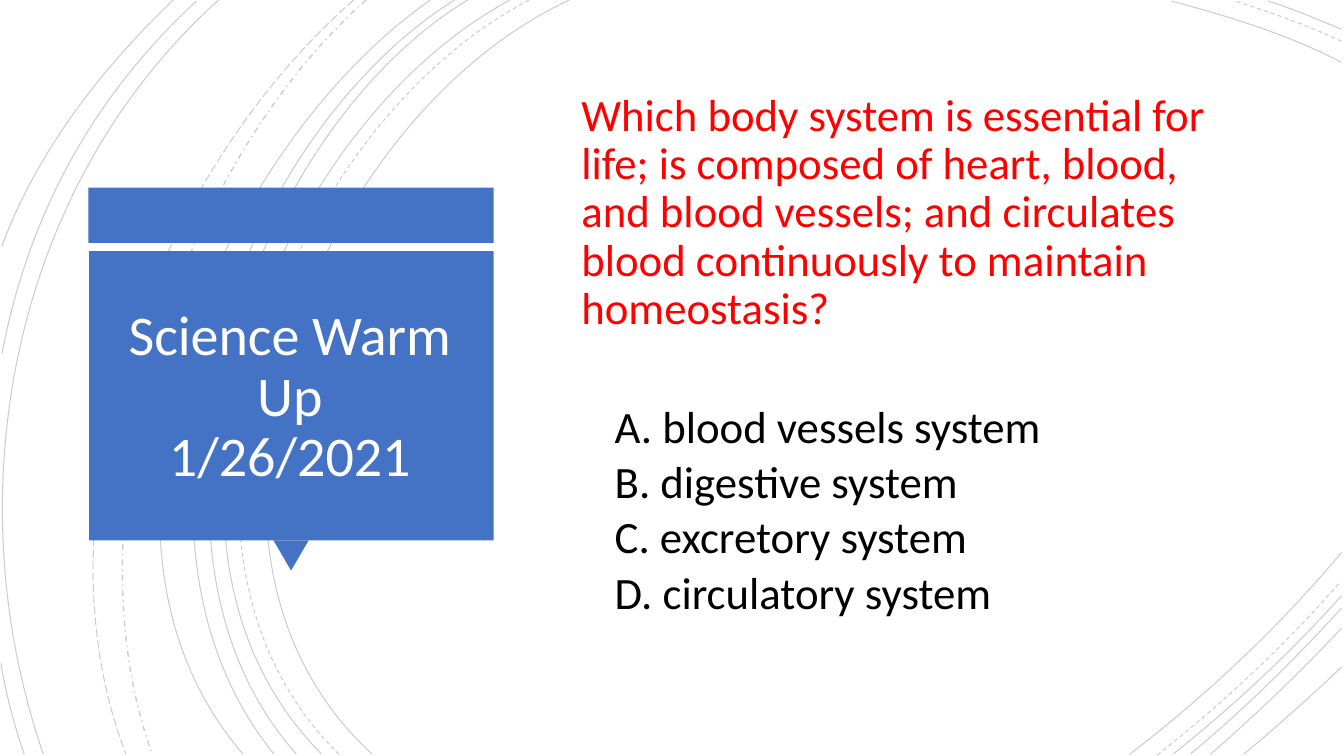
from lxml.etree import SubElement
from pptx import Presentation
from pptx.dml.color import RGBColor
from pptx.enum.dml import MSO_LINE
from pptx.enum.shapes import MSO_SHAPE as SHAPE
from pptx.enum.text import MSO_ANCHOR as ANCHOR, MSO_AUTO_SIZE, PP_ALIGN as ALIGN
from pptx.oxml.ns import qn
from pptx.util import Pt


def rgb(color):
    return RGBColor.from_string(color)


def style_text(p, size, color, **formats):
    p.line_spacing = 0.9
    for name, value in formats.items():
        setattr(p, name, value)
    for r in p.runs:
        r.font.name, r.font.size = "Calibri", Pt(size)
        r.font.color.rgb = rgb(color)


prs = Presentation()
prs.slide_width, prs.slide_height = Pt(960), Pt(540)
s = prs.slides.add_slide(prs.slide_layouts[5])

# Background arcs: start, two control points and end of each curve
SOLID, DASH = MSO_LINE.SOLID, MSO_LINE.DASH
ARCS = [
    (SOLID, (406.8, 0), (226.8, 82.8), (103, 388.8), (265.7, 538.6)),
    (SOLID, (958.3, 44.6), (920.2, 24.5), (877, 11.5), (836.6, 0.7)),
    (SOLID, (807.1, 538.6), (861.8, 496.8), (913.7, 447.8), (958.3, 394.6)),
    (DASH, (378, 0), (205.2, 90), (88.6, 386.6), (241.9, 538.6)),
    (DASH, (958.3, 29.5), (933.8, 18), (907.2, 8.6), (882, 0.7)),
    (DASH, (826.6, 539.3), (873.4, 502.6), (918, 460.8), (957.6, 415.4)),
    (SOLID, (364.3, 0), (194.4, 91.4), (79.2, 386.6), (229.7, 538.6)),
    (SOLID, (958.3, 20.9), (941, 13.7), (923.8, 6.5), (905.8, 0.7)),
    (SOLID, (838.1, 538.6), (880.6, 504.7), (921.6, 466.6), (958.3, 425.5)),
    (SOLID, (334.1, 0), (175.7, 95.8), (79.2, 389.5), (211.7, 538.6)),
    (SOLID, (850.3, 538.6), (888.5, 506.9), (924.5, 471.6), (958.3, 434.2)),
    (SOLID, (324.7, 0), (166.3, 99.4), (69.8, 383.8), (195.8, 538.6)),
    (SOLID, (864.7, 538.6), (897.1, 510.5), (928.8, 480.2), (958.3, 448.6)),
    (SOLID, (307.4, 0), (156.2, 105.8), (38.2, 380.9), (173.5, 538.6)),
    (SOLID, (888.5, 538.6), (912.2, 519.1), (935.3, 498.2), (958.3, 476.6)),
    (MSO_LINE.DASH_DOT, (261.4, 0), (126.7, 119.5), (46.8, 366.5), (108.7, 538.6)),
    (MSO_LINE.LONG_DASH, (252.7, 0), (113, 121.7), (20.9, 359.3), (90, 538.6)),
    (SOLID, (156.2, 0), (7.9, 133.2), (-33.1, 352.8), (31, 538.6)),
    (SOLID, (140.4, 0.7), (66.2, 69.1), (20.2, 154.1), (1.4, 252.7)),
    (SOLID, (0.7, 473.8), (4.3, 496.1), (10.1, 517.7), (17.3, 538.6)),
    (SOLID, (123.8, 0), (72, 49.7), (26.6, 108), (1.4, 175.7)),
]
arcs = s.shapes.add_group_shape()
for dash, *points in ARCS:
    start, *rest = [(Pt(x), Pt(y)) for x, y in points]
    builder = arcs.shapes.build_freeform(*start)
    builder.add_line_segments(rest, close=False)
    arc = builder.convert_to_shape()
    arc.shadow.inherit = False
    arc.fill.background()
    arc.line.width = Pt(1 if dash == MSO_LINE.DASH_DOT else 0.75)
    arc.line.color.rgb = rgb("000000")
    arc.line.dash_style = dash
    line_color = next(arc.line._ln.iter(qn("a:srgbClr")))
    SubElement(line_color, qn("a:alpha"), val="20000")
    # Turn the three straight segments into one cubic curve
    outline = next(arc._element.iter(qn("a:path")))
    curve = SubElement(outline, qn("a:cubicBezTo"))
    for segment in outline.findall(qn("a:lnTo")):
        curve.append(segment[0])
        outline.remove(segment)

# Blue title card with its pointer
card = s.shapes.add_group_shape()
for preset, left, top, width, height, angle in [
    (SHAPE.RECTANGLE, 63.2, 134, 289.4, 39.6, 0),
    (SHAPE.ISOSCELES_TRIANGLE, 195.3, 385.9, 25.2, 21.6, 180),
    (SHAPE.RECTANGLE, 63.6, 179.4, 289, 206.6, 0),
]:
    sp = card.shapes.add_shape(preset, Pt(left), Pt(top), Pt(width), Pt(height))
    sp.rotation = angle
    sp.shadow.inherit = False
    sp.fill.solid()
    sp.fill.fore_color.rgb = rgb("4472C4")
    sp.line.fill.background()

title = s.shapes.title
title.left, title.top, title.width, title.height = Pt(71.3), Pt(190), Pt(271.4), Pt(188.6)
s.shapes._spTree.append(title._element)
tf = title.text_frame
tf.text = "Science Warm Up\v1/26/2021"
tf.word_wrap, tf.vertical_anchor = True, ANCHOR.MIDDLE
tf.auto_size = MSO_AUTO_SIZE.NONE
style_text(tf.paragraphs[0], 40, "FFFFFF", alignment=ALIGN.CENTER, space_before=Pt(0))

# Question and its answers
QUESTION = ("Which body system is essential for life; is composed of heart, blood, "
            "and blood vessels; and circulates blood continuously to maintain homeostasis?")
ANSWERS = ["A. blood vessels system", "B. digestive system",
           "C. excretory system", "D. circulatory system"]
quiz = s.shapes.add_textbox(Pt(403.2), Pt(63.4), Pt(494.6), Pt(413.3))
tf = quiz.text_frame
tf.word_wrap, tf.vertical_anchor = True, ANCHOR.MIDDLE
tf.margin_bottom = Pt(35.6)
p = tf.paragraphs[0]
p.text = QUESTION
p._p.get_or_add_pPr().set("marL", str(Pt(5)))
style_text(p, 32, "FF0000", space_before=Pt(10))
for i, answer in enumerate(ANSWERS):
    p = tf.add_paragraph()
    p.text = answer
    p._p.get_or_add_pPr().set("marL", str(Pt(28.8)))
    style_text(p, 32, "000000", level=1, space_before=Pt(5 if i else 50))

prs.save("out.pptx")
